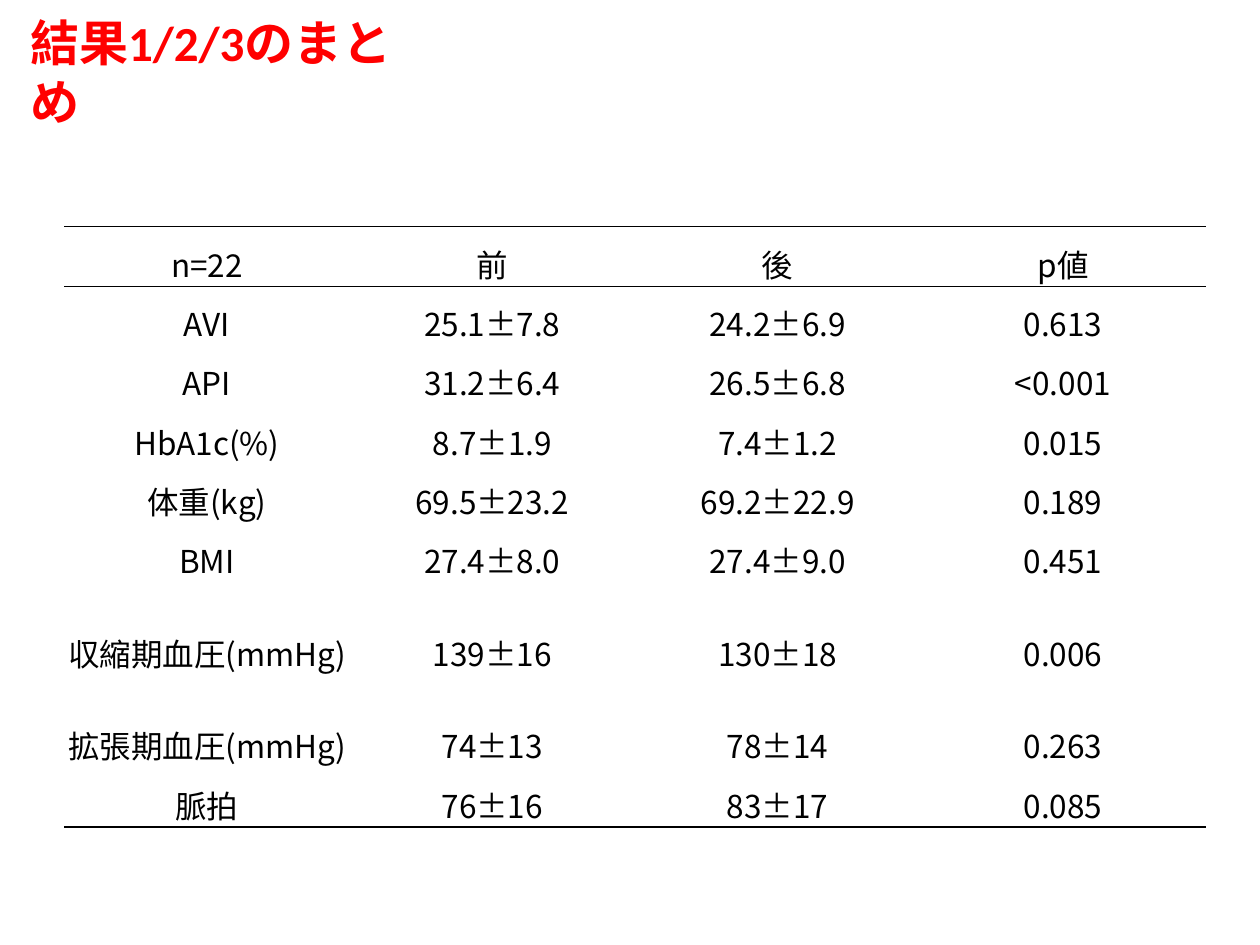
from lxml import etree
from pptx import Presentation
from pptx.dml.color import RGBColor
from pptx.enum.text import MSO_ANCHOR as ANCHOR, PP_ALIGN as ALIGN
from pptx.oxml.ns import qn
from pptx.util import Inches, Pt

ROWS = [
    ("n=22", "前", "後", "p値"),
    ("AVI", "25.1±7.8", "24.2±6.9", "0.613"),
    ("API", "31.2±6.4", "26.5±6.8", "<0.001"),
    ("HbA1c(%)", "8.7±1.9", "7.4±1.2", "0.015"),
    ("体重(kg)", "69.5±23.2", "69.2±22.9", "0.189"),
    ("BMI", "27.4±8.0", "27.4±9.0", "0.451"),
    ("収縮期血圧(mmHg)", "139±16", "130±18", "0.006"),
    ("拡張期血圧(mmHg)", "74±13", "78±14", "0.263"),
    ("脈拍", "76±16", "83±17", "0.085"),
]


def color(hex_code):
    return RGBColor.from_string(hex_code)


def set_text(tf, text, size=18, font="Noto Sans CJK JP", fill="000000",
             bold=False, align=ALIGN.CENTER):
    p = tf.paragraphs[0]
    p.alignment = align
    r = p.add_run()
    r.text = text
    r.font.size = Pt(size)
    r.font.name = font
    r.font.bold = bold
    r.font.color.rgb = color(fill)


def set_borders(cell, **widths):
    """Draw the named sides (lnT, lnB) in black and clear the others."""
    tc_pr = cell._tc.get_or_add_tcPr()
    for i, side in enumerate(("lnL", "lnR", "lnT", "lnB")):
        ln = etree.Element(qn(f"a:{side}"))
        tc_pr.insert(i, ln)
        if side in widths:
            ln.set("w", str(Pt(widths[side])))
            fill = etree.SubElement(ln, qn("a:solidFill"))
            etree.SubElement(fill, qn("a:srgbClr"), val="000000")
        else:
            etree.SubElement(ln, qn("a:noFill"))


def add_title(s, left, top, width, height):
    sp = s.shapes.title
    sp.left, sp.top = Inches(left), Inches(top)
    sp.width, sp.height = Inches(width), Inches(height)
    tf = sp.text_frame
    tf.word_wrap = True
    tf.vertical_anchor = ANCHOR.TOP
    set_text(tf, "結果1/2/3のまとめ", size=28, font="Calibri", fill="FF0000",
             bold=True, align=ALIGN.LEFT)


def add_results_table(s, left, top, width, height):
    table = s.shapes.add_table(len(ROWS), len(ROWS[0]), Inches(left), Inches(top),
                               Inches(width), Inches(height)).table
    table.first_row = table.horz_banding = False
    borders = {0: {"lnT": 0.5, "lnB": 0.5}, 1: {"lnT": 0.5},
               len(ROWS) - 1: {"lnB": 1}}
    for i, row in enumerate(ROWS):
        for j, text in enumerate(row):
            cell = table.cell(i, j)
            cell.fill.background()
            cell.vertical_anchor = ANCHOR.BOTTOM
            cell.margin_left = cell.margin_right = cell.margin_top = Inches(0.01)
            cell.margin_bottom = 0
            set_text(cell.text_frame, text)
            set_borders(cell, **borders.get(i, {}))


def main():
    prs = Presentation()
    prs.slide_width, prs.slide_height = Inches(10), Inches(7.5)
    s = prs.slides.add_slide(prs.slide_layouts[5])
    add_title(s, 0.14, 0.05, 3.36, 0.57)
    add_results_table(s, 0.51, 1.8, 9.06, 4.24)
    prs.save("out.pptx")


if __name__ == "__main__":
    main()
